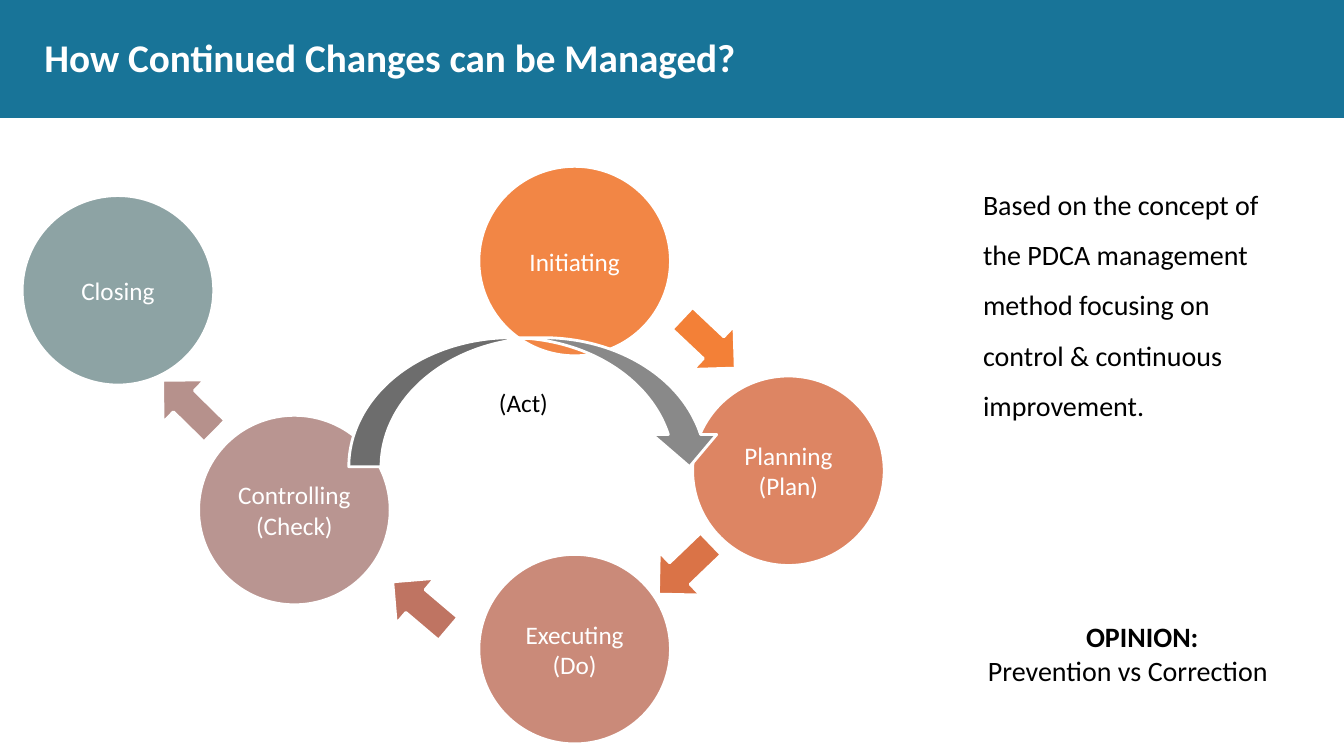
from dataclasses import dataclass

from pptx import Presentation
from pptx.dml.color import RGBColor
from pptx.enum.shapes import MSO_SHAPE
from pptx.enum.text import MSO_ANCHOR, PP_ALIGN
from pptx.shapes.autoshape import Shape
from pptx.slide import Slide
from pptx.text.text import TextFrame
from pptx.util import Emu, Pt

EMU_PER_PX = 9144  # 100 px to the inch
FONT = "Calibri"
WHITE, BLACK, BANNER_BLUE, CYCLE_GRAY = "FFFFFF", "000000", "187498", "898989"

RECTANGLE, OVAL = MSO_SHAPE.RECTANGLE, MSO_SHAPE.OVAL
RIGHT_ARROW, CURVED_ARROW = MSO_SHAPE.RIGHT_ARROW, MSO_SHAPE.CURVED_LEFT_ARROW
TOP, MIDDLE = MSO_ANCHOR.TOP, MSO_ANCHOR.MIDDLE
LEFT, CENTER = PP_ALIGN.LEFT, PP_ALIGN.CENTER

PHASE_WIDTH, PHASE_HEIGHT = 190, 188
ARROW_WIDTH, ARROW_HEIGHT = 72, 59


@dataclass(frozen=True)
class Box:
    left: int
    top: int
    width: int
    height: int

    def emu(self) -> tuple[Emu, Emu, Emu, Emu]:
        return px(self.left), px(self.top), px(self.width), px(self.height)


@dataclass(frozen=True)
class Phase:
    left: int
    top: int
    fill: str
    lines: tuple[str, ...]


@dataclass(frozen=True)
class Arrow:
    left: int
    top: int
    rotation: float
    fill: str


PHASES = (
    Phase(475, 165, "F28645", ("Initiating",)),
    Phase(687, 373, "DD8563", ("Planning (Plan)",)),
    Phase(475, 550, "CA8A79", ("Executing", "(Do)")),
    Phase(197, 412, "B99591", ("Controlling", "(Check)")),
    Phase(22, 194, "8DA3A4", ("Closing",)),
)
ARROWS = (
    Arrow(667, 311, 43.3, "F38037"),
    Arrow(643, 535, 136.2, "DA7347"),
    Arrow(381, 571, 220.3, "BF7462"),
    Arrow(151, 373, 224.5, "B6918C"),
)


def px(length: int) -> Emu:
    return Emu(length * EMU_PER_PX)


def color(hex_value: str) -> RGBColor:
    return RGBColor.from_string(hex_value)


def add_figure(slide: Slide, kind: MSO_SHAPE, box: Box, fill: str,
               outline: str | None = WHITE, rotation: float = 0) -> Shape:
    shape = slide.shapes.add_shape(kind, *box.emu())
    shape.shadow.inherit = False
    shape.rotation = rotation
    shape.fill.solid()
    shape.fill.fore_color.rgb = color(fill)
    if outline:
        shape.line.color.rgb = color(outline)
        shape.line.width = Pt(2)
    else:
        shape.line.fill.background()
    return shape


def write_line(frame: TextFrame, text: str, *, size: int, ink: str = BLACK,
               bold: bool = False, align: PP_ALIGN = LEFT,
               spacing: float = 1.0) -> None:
    """Fill the first paragraph if it is empty, otherwise append one."""
    paragraph = frame.paragraphs[0]
    if paragraph.runs:
        paragraph = frame.add_paragraph()
    paragraph.alignment = align
    paragraph.line_spacing = spacing
    run = paragraph.add_run()
    run.text = text
    run.font.name = FONT
    run.font.size = Pt(size)
    run.font.bold = bold
    run.font.color.rgb = color(ink)


def add_frame(slide: Slide, box: Box, anchor: MSO_ANCHOR = TOP,
              inset: bool = True, wrap: bool = True) -> TextFrame:
    frame = slide.shapes.add_textbox(*box.emu()).text_frame
    frame.word_wrap = wrap
    frame.vertical_anchor = anchor
    if not inset:
        frame.margin_left = frame.margin_right = 0
        frame.margin_top = frame.margin_bottom = 0
    return frame


def add_phase(slide: Slide, phase: Phase) -> None:
    box = Box(phase.left, phase.top, PHASE_WIDTH, PHASE_HEIGHT)
    frame = add_figure(slide, OVAL, box, phase.fill).text_frame
    frame.word_wrap = True
    frame.vertical_anchor = MIDDLE
    for line in phase.lines:
        write_line(frame, line, size=18, ink=WHITE, align=CENTER)


def add_arrow(slide: Slide, arrow: Arrow) -> None:
    box = Box(arrow.left, arrow.top, ARROW_WIDTH, ARROW_HEIGHT)
    add_figure(slide, RIGHT_ARROW, box, arrow.fill, rotation=arrow.rotation)


def main() -> None:
    presentation = Presentation()
    presentation.slide_width, presentation.slide_height = px(1333), px(750)
    slide = presentation.slides.add_slide(presentation.slide_layouts[6])

    # Title banner
    add_figure(slide, RECTANGLE, Box(0, 0, 1333, 117), BANNER_BLUE, outline=None)
    title = add_frame(slide, Box(44, 19, 1246, 74), MIDDLE, inset=False)
    write_line(title, "How Continued Changes can be Managed?",
               size=28, ink=WHITE, bold=True)

    # Explanation and opinion on the right
    explanation = add_frame(slide, Box(975, 138, 283, 312), MIDDLE, inset=False)
    write_line(explanation, "Based on the concept of the PDCA management method "
               "focusing on control & continuous improvement.",
               size=20, spacing=1.5)
    opinion = add_frame(slide, Box(970, 610, 326, 77))
    write_line(opinion, "OPINION:", size=20, bold=True, align=CENTER)
    write_line(opinion, "Prevention vs Correction", size=20)

    # Project phases and the arrows between them
    for phase in PHASES:
        add_phase(slide, phase)
    for arrow in ARROWS:
        add_arrow(slide, arrow)

    # Feedback loop from controlling to planning
    add_figure(slide, CURVED_ARROW, Box(467, 214, 128, 370), CYCLE_GRAY,
               rotation=270)
    act = add_frame(slide, Box(485, 379, 69, 40), wrap=False)
    write_line(act, "(Act)", size=18)

    presentation.save("out.pptx")


if __name__ == "__main__":
    main()
